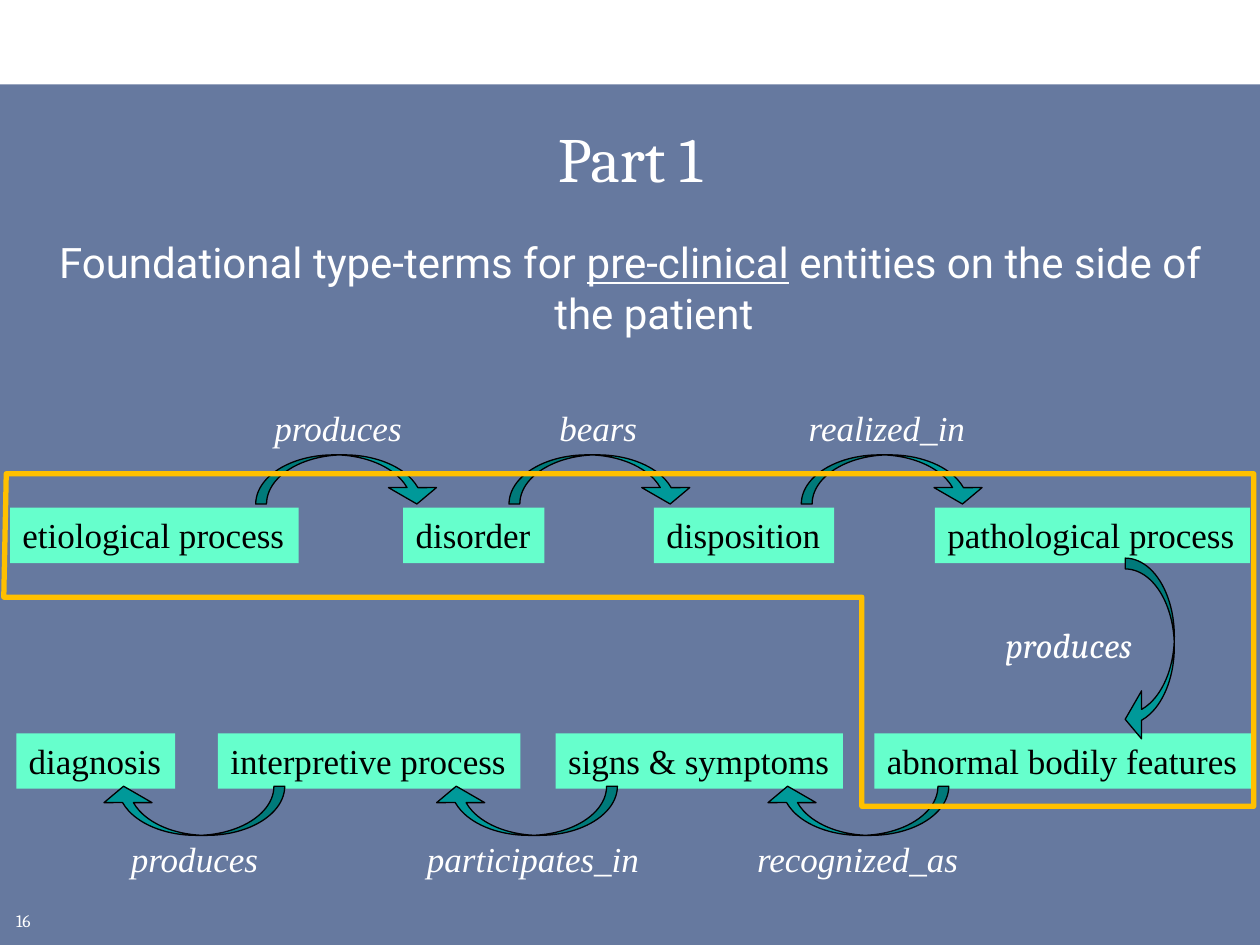
from pptx import Presentation
from pptx.dml.color import RGBColor
from pptx.enum import shapes, text
from pptx.oxml.ns import qn
from pptx.util import Inches, Pt
from lxml import etree

HUES = {"navy": "002060", "mint": "66FFCC", "teal": "009999",
        "gold": "FFC000", "white": "FFFFFF", "black": "000000"}
SERIF, TIMES, SANS = "Cambria", "Times New Roman", "Roboto"
KINDS = shapes.MSO_SHAPE


class Deck:
    def __init__(self, wide, high):
        self.prs = Presentation()
        self.prs.slide_width, self.prs.slide_height = Inches(wide), Inches(high)
        self.slide = self.prs.slides.add_slide(self.prs.slide_layouts[1])
        self.items = self.slide.shapes

    def hue(self, name):
        return RGBColor.from_string(HUES[name])

    def style(self, font, name, size, hue, **more):
        for key, val in {"name": name, "size": Pt(size), **more}.items():
            setattr(font, key, val)
        font.color.rgb = self.hue(hue)

    def frame(self, shape, **vals):
        for key, val in vals.items():
            setattr(shape.text_frame, key, val)

    def paint(self, shape, fill=None, line=None, width=0.75):
        shape.shadow.inherit = False
        if fill:
            shape.fill.solid()
            shape.fill.fore_color.rgb = self.hue(fill)
        else:
            shape.fill.background()
        if line:
            shape.line.color.rgb = self.hue(line)
            shape.line.width = Pt(width)
        else:
            shape.line.fill.background()

    def shape(self, kind, box, **look):
        item = self.items.add_shape(kind, *map(Inches, box))
        self.paint(item, **look)
        return item

    def panel(self, box, fill, alpha):
        item = self.shape(KINDS.RECTANGLE, box, fill=fill)
        tint = item._element.spPr.find(".//" + qn("a:srgbClr"))
        etree.SubElement(tint, qn("a:alpha"), val=str(alpha * 1000))

    def holder(self, item, box, runs, font, size, hang=0):
        item.left, item.top, item.width, item.height = map(Inches, box)
        self.frame(item, word_wrap=True, auto_size=text.MSO_AUTO_SIZE.NONE)
        para = item.text_frame.paragraphs[0]
        para.alignment = text.PP_ALIGN.CENTER
        if hang:
            props = para._p.get_or_add_pPr()
            props.set("marL", str(Inches(hang)))
            props.set("indent", str(Inches(-hang)))
            etree.SubElement(props, qn("a:buNone"))
            para.space_before = Pt(0)
        for words, under in runs:
            run = para.add_run()
            run.text = words
            self.style(run.font, font, size, "white", bold=False, underline=under)

    def letter(self, item, words, font, size, hue, **more):
        self.frame(item, word_wrap=False,
                   auto_size=text.MSO_AUTO_SIZE.SHAPE_TO_FIT_TEXT,
                   vertical_anchor=text.MSO_ANCHOR.TOP)
        para = item.text_frame.paragraphs[0]
        para.alignment = text.PP_ALIGN.LEFT
        run = para.add_run()
        run.text = words
        self.style(run.font, font, size, hue, **more)

    def term(self, words, left, top, wide):
        item = self.shape(KINDS.RECTANGLE, (left, top, wide, 0.44), fill="mint")
        self.letter(item, words, TIMES, 20, "black")

    def label(self, words, left, top, wide, high=0.44, font=TIMES, size=20, italic=True):
        item = self.items.add_textbox(*map(Inches, (left, top, wide, high)))
        self.letter(item, words, font, size, "white", italic=italic)

    def arrow(self, left, top, turn=0):
        item = self.shape(KINDS.CURVED_DOWN_ARROW, (left, top, 1.47, 0.39),
                          fill="teal", line="black")
        item.rotation = turn
        for i, val in enumerate((0.22, 0.978, 0.333)):
            item.adjustments[i] = val

    def outline(self, points, hue, width):
        spots = [(Inches(x), Inches(y)) for x, y in points]
        pen = self.items.build_freeform(*spots[0])
        pen.add_line_segments(spots[1:], close=True)
        self.paint(pen.convert_to_shape(), line=hue, width=width)


def main():
    deck = Deck(10, 7.5)
    title, body = deck.items.title, deck.slide.placeholders[1]

    # Backdrop, placed behind the placeholders, and page number
    deck.panel((0, 0.67, 10, 6.83), "navy", 60)
    tree = title._element.getparent()
    tree.extend([title._element, body._element])
    deck.label("16", 0.03, 7.17, 0.39, 0.25, SERIF, 10, False)

    # Title and lead
    deck.holder(title, (0.25, 0.83, 9.5, 0.83), [("Part 1", False)], SERIF, 36)
    deck.holder(body, (0.25, 1.83, 9.5, 5.42),
                [("Foundational type-terms for ", False), ("pre-clinical", True),
                 (" entities on the side of the patient", False)], SANS, 24, 0.38)

    # Rows: terms, relation labels and arrows, with the arrow turn
    rows = [
        (4.03, 3.18, 3.61, 0,
         [("etiological process", 0.08, 2.29), ("disorder", 3.2, 1.12),
          ("disposition", 5.19, 1.43), ("pathological process", 7.42, 2.5)],
         [("produces", 2.08, 1.22, 2.03), ("bears", 4.34, 0.82, 4.04),
          ("realized_in", 6.32, 1.45, 6.36)]),
        (5.82, 6.6, 6.24, 180,
         [("diagnosis", 0.13, 1.26), ("interpretive process", 1.73, 2.4),
          ("signs & symptoms", 4.41, 2.28), ("abnormal bodily features", 6.94, 3)],
         [("produces", 0.94, 1.22, 0.79), ("participates_in", 3.29, 1.9, 3.43),
          ("recognized_as", 5.91, 1.81, 6.06)]),
    ]
    for top, over, bend, turn, terms, links in rows:
        for words, left, wide in terms:
            deck.term(words, left, top, wide)
        for words, left, wide, start in links:
            deck.label(words, left, over, wide)
            deck.arrow(start, bend, turn)

    # Link between the rows
    deck.label("produces", 7.88, 4.9, 1.22, font=SERIF)
    deck.arrow(8.39, 4.97, 90)

    # Frame around the pre-clinical terms
    deck.outline([(0.05, 3.76), (9.95, 3.76), (9.95, 6.4),
                  (6.84, 6.4), (6.84, 4.74), (0.03, 4.74)], "gold", 3)

    deck.prs.save("out.pptx")


if __name__ == "__main__":
    main()
